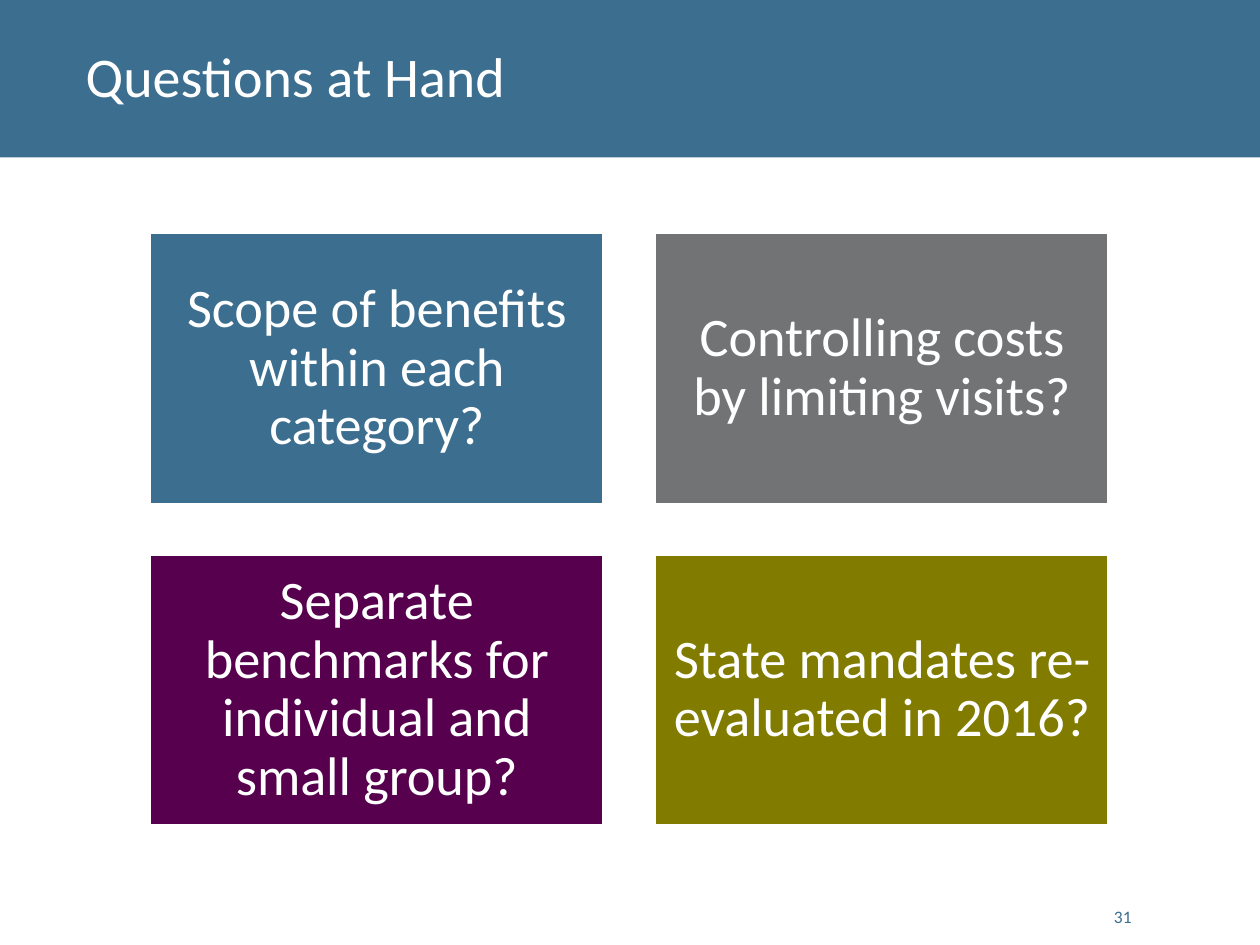
from pptx import Presentation
from pptx.dml.color import RGBColor
from pptx.enum.shapes import MSO_SHAPE
from pptx.enum.text import MSO_ANCHOR, MSO_AUTO_SIZE, PP_ALIGN
from pptx.util import Inches, Pt

RECT = MSO_SHAPE.RECTANGLE
TOP, MIDDLE, BOTTOM = MSO_ANCHOR.TOP, MSO_ANCHOR.MIDDLE, MSO_ANCHOR.BOTTOM
LEFT, CENTER, RIGHT = PP_ALIGN.LEFT, PP_ALIGN.CENTER, PP_ALIGN.RIGHT
NO_FIT = MSO_AUTO_SIZE.NONE

FONT = "Calibri"
BLUE, WHITE = "3B6E8F", "FFFFFF"
COLUMNS = 2
GRID_LEFT, GRID_TOP = 1.17, 1.83
CARD_W, CARD_H = 3.64, 2.19
STEP_X, STEP_Y = 4.01, 2.55
CARD_INSET = 0.13
QUESTIONS = [
    ("Scope of benefits within each category?", BLUE),
    ("Controlling costs by limiting visits?", "717375"),
    ("Separate benchmarks for individual and small group?", "56004E"),
    ("State mandates re-evaluated in 2016?", "817C00"),
]


def rgb(value):
    return RGBColor.from_string(value)


def write(sp, text, size, color, align, anchor):
    tf = sp.text_frame
    tf.word_wrap = True
    tf.auto_size = NO_FIT
    tf.vertical_anchor = anchor
    p = tf.paragraphs[0]
    p.text = text
    p.alignment = align
    p.font.name = FONT
    p.font.size = Pt(size)
    p.font.color.rgb = rgb(color)
    return tf


def add_rect(slide, x, y, w, h, fill):
    sp = slide.shapes.add_shape(RECT, Inches(x), Inches(y), Inches(w), Inches(h))
    sp.shadow.inherit = False
    sp.fill.solid()
    sp.fill.fore_color.rgb = rgb(fill)
    sp.line.fill.background()
    return sp


def add_header(slide, text):
    band = add_rect(slide, 0, 0, 10, 1.25, BLUE)
    title = slide.shapes.title
    band.element.addnext(title.element)
    title.left, title.top = Inches(0.58), Inches(0.28)
    title.width, title.height = Inches(9.17), Inches(0.64)
    write(title, text, 32, WHITE, LEFT, TOP)


def add_card(slide, index, text, fill):
    row, col = divmod(index, COLUMNS)
    sp = add_rect(slide, GRID_LEFT + col * STEP_X, GRID_TOP + row * STEP_Y,
                  CARD_W, CARD_H, fill)
    sp.line.color.rgb = rgb(WHITE)
    sp.line.width = Pt(4.33)
    tf = write(sp, text, 31, WHITE, CENTER, MIDDLE)
    tf.margin_left = tf.margin_right = Inches(CARD_INSET)
    tf.margin_top = tf.margin_bottom = Inches(CARD_INSET)
    tf.paragraphs[0].line_spacing = 0.9


def add_page_number(slide, number):
    sp = slide.shapes.add_textbox(Inches(8.68), Inches(7.01), Inches(0.4), Inches(0.4))
    write(sp, number, 10, BLUE, RIGHT, BOTTOM)


def main():
    prs = Presentation()
    prs.slide_width, prs.slide_height = Inches(10), Inches(7.5)
    slide = prs.slides.add_slide(prs.slide_layouts[5])
    add_header(slide, "Questions at Hand")
    for index, (text, fill) in enumerate(QUESTIONS):
        add_card(slide, index, text, fill)
    add_page_number(slide, "31")
    prs.save("out.pptx")


if __name__ == "__main__":
    main()
